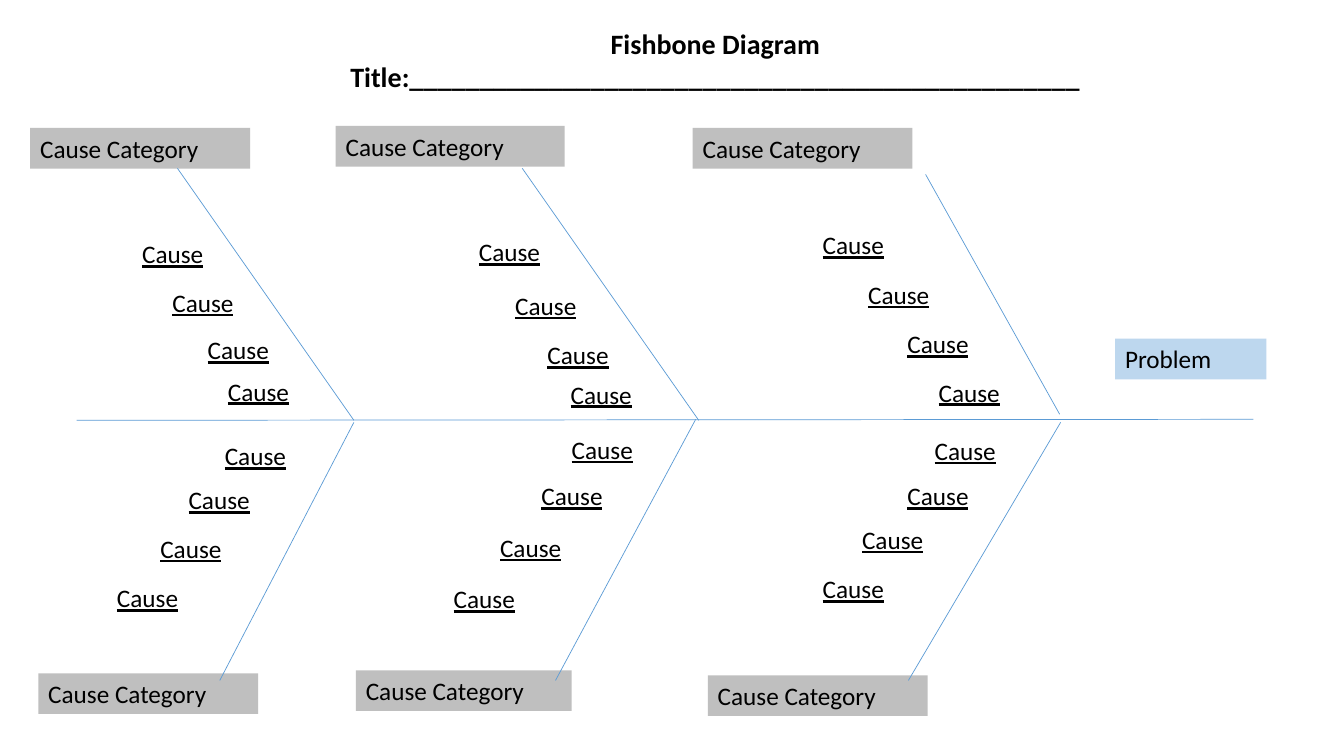
import pptx
import pptx.dml.color
import pptx.enum.shapes
import pptx.enum.text
import pptx.oxml
import pptx.oxml.ns
import pptx.util

COLORS = {"category": "BFBFBF", "problem": "BDD7EE", "bone": "5B9BD5", "ink": "000000"}

# Square grid: 75 rows fill the height of the slide
SLIDE_WIDTH, SLIDE_HEIGHT = pptx.util.Inches(13.33), pptx.util.Inches(7.5)
CELL = SLIDE_HEIGHT / 75
BOX_ROWS = 4.04
CAUSE_COLUMNS, CAUSE_INDENT, CAUSE_RULE = 15.8, 6.5, 8.3

# Each rib: category (column, row, columns), bone (start, end), causes (column, row)
RIBS = [
    {"category": (3, 12.7, 21.8), "bone": ((17.6, 16.7), (35.1, 41.7)),
     "causes": [(7.6, 23.2), (10.6, 28), (14.1, 32.7), (16.1, 36.8)]},
    {"category": (33.3, 12.5, 22.7), "bone": ((51.8, 16.7), (69.3, 41.7)),
     "causes": [(41, 23), (44.6, 28.3), (47.8, 33.2), (50.1, 37.1)]},
    {"category": (68.7, 12.7, 21.8), "bone": ((91.8, 17.3), (105.1, 41.1)),
     "causes": [(75.1, 22.3), (79.6, 27.2), (83.5, 32.1), (86.6, 36.9)]},
    {"category": (3.8, 66.8, 21.8), "bone": ((35.1, 41.9), (21.8, 67.5)),
     "causes": [(15.8, 43.2), (12.2, 47.6), (9.4, 52.4), (5.1, 57.3)]},
    {"category": (35.3, 66.5, 21.4), "bone": ((69, 41.6), (55.1, 67.5)),
     "causes": [(50.2, 42.6), (47.2, 47.2), (43.1, 52.3), (38.5, 57.4)]},
    {"category": (70.2, 67, 21.8), "bone": ((105.2, 41.9), (90.1, 67.5)),
     "causes": [(86.2, 42.7), (83.5, 47.2), (79, 51.5), (75.1, 56.4)]},
]


def cells(count):
    return pptx.util.Emu(round(count * CELL))


def color(name):
    return pptx.dml.color.RGBColor.from_string(COLORS[name])


def write(box, text, align="LEFT", **formats):
    """Put one paragraph into a box and apply the font formats."""
    frame = box.text_frame
    frame.word_wrap = True
    frame.auto_size = pptx.enum.text.MSO_AUTO_SIZE.SHAPE_TO_FIT_TEXT
    frame.vertical_anchor = pptx.enum.text.MSO_ANCHOR.TOP
    para = frame.paragraphs[0]
    para.alignment = getattr(pptx.enum.text.PP_ALIGN, align)
    span = para.add_run()
    span.text = text
    settings = {"name": "Calibri", "size": pptx.util.Pt(18), **formats}
    for key, value in settings.items():
        setattr(span.font, key, value)
    span.font.color.rgb = color("ink")
    return para


def add_text(page, left, top, width, height):
    return page.shapes.add_textbox(cells(left), cells(top), cells(width), cells(height))


def add_label(page, text, left, top, width, fill):
    box = page.shapes.add_shape(
        pptx.enum.shapes.MSO_SHAPE.RECTANGLE,
        cells(left), cells(top), cells(width), cells(BOX_ROWS))
    box.shadow.inherit = False
    box.fill.solid()
    box.fill.fore_color.rgb = color(fill)
    box.line.fill.background()
    write(box, text)


def add_bone(page, start, end):
    bone = page.shapes.add_connector(
        pptx.enum.shapes.MSO_CONNECTOR.STRAIGHT,
        *[cells(value) for value in (*start, *end)])
    bone.line.color.rgb = color("bone")
    bone.line.width = pptx.util.Pt(0.5)
    properties = bone._element.spPr
    properties.append(pptx.oxml.parse_xml(
        f"<a:effectLst {pptx.oxml.ns.nsdecls('a')}/>"))


def add_cause(page, left, top):
    """Underlined word whose rule runs on to a tab stop."""
    box = add_text(page, left, top, CAUSE_COLUMNS, BOX_ROWS)
    box.text_frame.margin_left = cells(CAUSE_INDENT)
    box.text_frame.margin_right = 0
    para = write(box, "Cause\t", underline=True)
    para._p.get_or_add_pPr().append(pptx.oxml.parse_xml(
        f"<a:tabLst {pptx.oxml.ns.nsdecls('a')}>"
        f'<a:tab pos="{cells(CAUSE_RULE)}" algn="l"/></a:tabLst>'))


def main():
    deck = pptx.Presentation()
    deck.slide_width, deck.slide_height = SLIDE_WIDTH, SLIDE_HEIGHT
    page = deck.slides.add_slide(deck.slide_layouts[6])

    # Title, wrapped after the first two words
    title = add_text(page, 25.2, 2.1, 91.5, 7.7)
    write(title, "Fishbone Diagram Title:" + "_" * 48, "CENTER",
          size=pptx.util.Pt(20), bold=True)

    # Category and problem labels
    for rib in RIBS:
        add_label(page, "Cause Category", *rib["category"], "category")
    add_label(page, "Problem", 110.6, 33.6, 15, "problem")

    # Spine and ribs
    add_bone(page, (7.6, 41.7), (124.3, 41.6))
    for rib in RIBS:
        add_bone(page, *rib["bone"])

    # Causes along each rib
    for rib in RIBS:
        for left, top in rib["causes"]:
            add_cause(page, left, top)

    deck.save("out.pptx")


if __name__ == "__main__":
    main()
